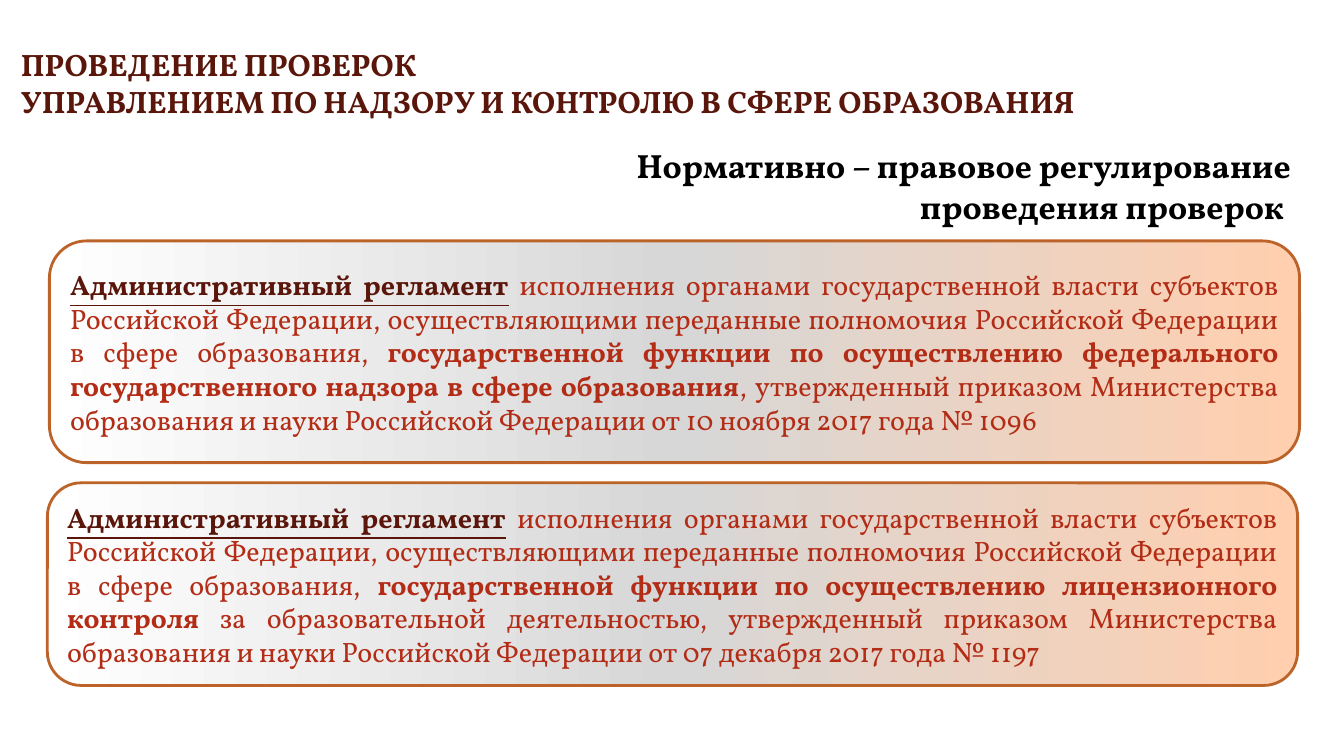
from copy import deepcopy
from dataclasses import dataclass

from lxml import etree
from pptx import Presentation
from pptx.dml.color import RGBColor
from pptx.enum.shapes import MSO_SHAPE
from pptx.enum.text import MSO_ANCHOR, PP_ALIGN
from pptx.oxml.ns import qn
from pptx.util import Inches, Pt

RECT, ROUNDED = MSO_SHAPE.RECTANGLE, MSO_SHAPE.ROUNDED_RECTANGLE
LEFT, RIGHT, JUSTIFY = PP_ALIGN.LEFT, PP_ALIGN.RIGHT, PP_ALIGN.JUSTIFY
MIDDLE, BOTTOM = MSO_ANCHOR.MIDDLE, MSO_ANCHOR.BOTTOM
FONT = "Vollkorn"
COLORS = {
    "white": "FFFFFF",
    "black": "000000",
    "maroon": "5A160B",
    "red": "B32C16",
    "border": "BC6329",
    "peach": "FFCFAF",
    "grey": "D7D7D7",
}
GRADIENT = [(0, "peach"), (0.5, "grey"), (1, "white")]
CARD_WIDTH = 12.4
REGULATION = "Административный регламент"
COMMON = (
    "исполнения органами государственной власти субъектов Российской Федерации, "
    "осуществляющими переданные полномочия Российской Федерации в сфере образования, "
)
APPROVED = ", утвержденный приказом Министерства образования и науки Российской Федерации от "


@dataclass
class Card:
    left: float
    top: float
    height: float
    function: str
    ending: str


CARDS = [
    Card(0.47, 4.79, 2.01,
         "государственной функции по осуществлению лицензионного контроля",
         " за образовательной деятельностью" + APPROVED + "07 декабря 2017 года № 1197"),
    Card(0.49, 2.39, 2.2,
         "государственной функции по осуществлению федерального "
         "государственного надзора в сфере образования",
         APPROVED + "10 ноября 2017 года № 1096"),
]


def rgb(name: str) -> RGBColor:
    return RGBColor.from_string(COLORS[name])


def add_run(p, text: str, *, size: float, color: str,
            bold: bool = True, underline: bool = False) -> None:
    r = p.add_run()
    r.text = text
    r.font.name = FONT
    r.font.size = Pt(size)
    r.font.bold = bold
    r.font.underline = underline
    r.font.color.rgb = rgb(color)


def add_lines(tf, lines: list[str], *, align, size: float, color: str) -> None:
    for i, line in enumerate(lines):
        p = tf.add_paragraph() if i else tf.paragraphs[0]
        p.alignment = align
        add_run(p, line, size=size, color=color)


def fill_gradient(sp) -> None:
    sp.fill.gradient()
    sp.fill.gradient_angle = 180
    first = next(sp._element.spPr.iter(qn("a:gs")))
    first.addnext(deepcopy(first))
    for stop, (position, color) in zip(sp.fill.gradient_stops, GRADIENT):
        stop.position = position
        stop.color.rgb = rgb(color)


def add_card(s, card: Card) -> None:
    sp = s.shapes.add_shape(ROUNDED, Inches(card.left), Inches(card.top),
                            Inches(CARD_WIDTH), Inches(card.height))
    sp.shadow.inherit = False
    fill_gradient(sp)
    sp.line.color.rgb = rgb("border")
    sp.line.width = Pt(2)
    tf = sp.text_frame
    tf.word_wrap = True
    tf.vertical_anchor = MIDDLE
    p = tf.paragraphs[0]
    p.alignment = JUSTIFY
    add_run(p, REGULATION, size=20, color="maroon", underline=True)
    add_run(p, " ", size=20, color="maroon")
    add_run(p, COMMON, size=20, color="red", bold=False)
    add_run(p, card.function, size=20, color="red")
    add_run(p, card.ending, size=20, color="red", bold=False)


def add_title(s) -> None:
    sp = s.shapes.add_shape(RECT, Inches(0.11), Inches(0.13), Inches(11.59), Inches(1.1))
    sp.shadow.inherit = False
    sp.fill.solid()
    sp.fill.fore_color.rgb = rgb("white")
    # Half-transparent fill
    color = next(sp._element.spPr.iter(qn("a:srgbClr")))
    etree.SubElement(color, qn("a:alpha"), val="50000")
    sp.line.fill.background()
    tf = sp.text_frame
    tf.word_wrap = True
    tf.vertical_anchor = BOTTOM
    tf.margin_bottom = Inches(0.04)
    add_lines(tf, ["ПРОВЕДЕНИЕ ПРОВЕРОК",
                   "УПРАВЛЕНИЕМ ПО НАДЗОРУ И КОНТРОЛЮ В СФЕРЕ ОБРАЗОВАНИЯ"],
              align=LEFT, size=22.1, color="maroon")


def add_subtitle(s) -> None:
    sp = s.shapes.add_textbox(Inches(3.62), Inches(1.39), Inches(9.35), Inches(0.91))
    tf = sp.text_frame
    tf.word_wrap = True
    tf.margin_right = Inches(0.17)
    add_lines(tf, ["Нормативно – правовое регулирование", "проведения проверок "],
              align=RIGHT, size=24, color="black")


def main() -> None:
    prs = Presentation()
    prs.slide_width, prs.slide_height = Inches(13.33), Inches(7.5)
    s = prs.slides.add_slide(prs.slide_layouts[6])

    # Heading
    add_title(s)

    # Regulations
    for card in CARDS:
        add_card(s, card)

    # Subheading
    add_subtitle(s)

    prs.save("out.pptx")


if __name__ == "__main__":
    main()
